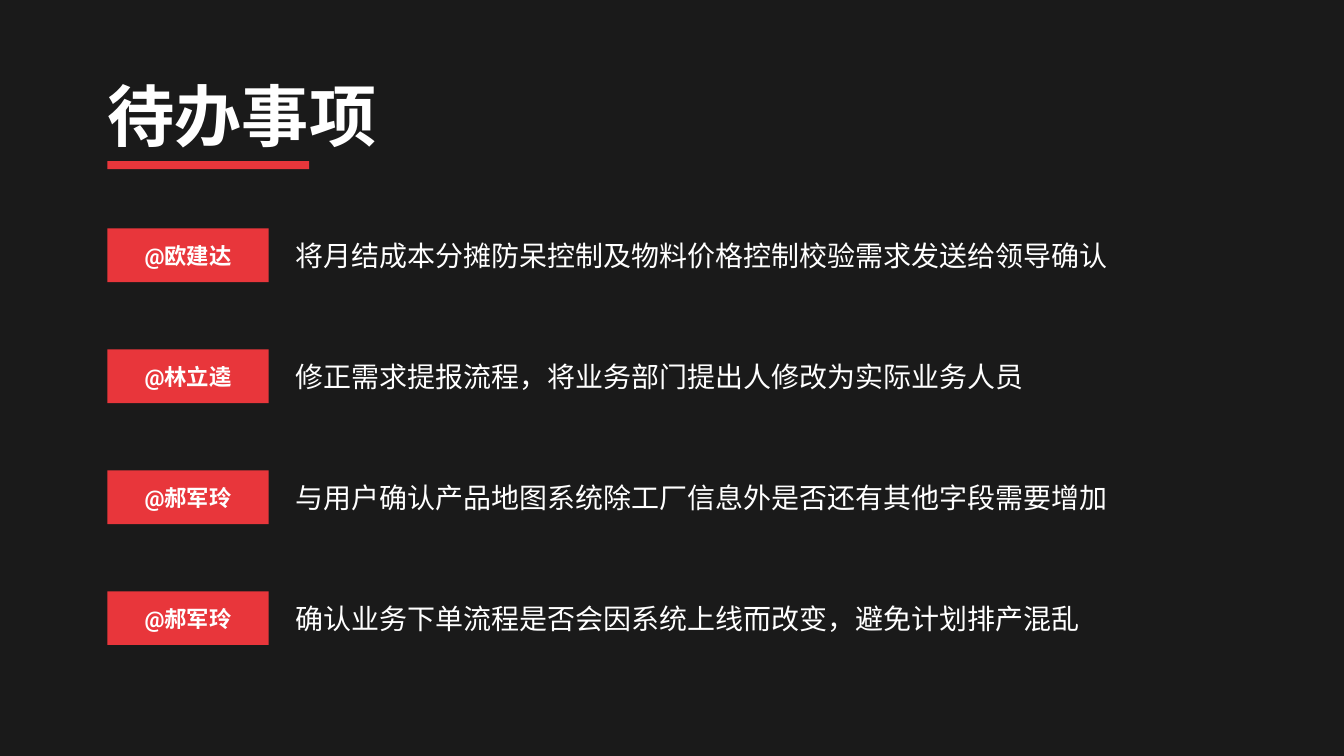
from dataclasses import dataclass

import pptx
import pptx.dml.color
import pptx.enum.shapes
import pptx.enum.text
import pptx.util
from pptx.util import Inches

ALIGN = pptx.enum.text.PP_ALIGN


@dataclass(frozen=True)
class Theme:
    background: str = "1A1A1A"
    accent: str = "E8363B"
    text: str = "FFFFFF"
    font: str = "Roboto"
    title_size: int = 36
    owner_size: int = 12
    task_size: int = 15


THEME = Theme()

SLIDE_WIDTH = 10
SLIDE_HEIGHT = SLIDE_WIDTH * 9 / 16
LEFT = 0.8
OWNER_WIDTH = 1.2
TASK_LEFT = 2.2
TASK_WIDTH = 7
FIRST_ROW = 1.7
ROW_STEP = 0.9
ROW_HEIGHT = 0.4

TODOS = [
    ("@欧建达", "将月结成本分摊防呆控制及物料价格控制校验需求发送给领导确认"),
    ("@林立逵", "修正需求提报流程，将业务部门提出人修改为实际业务人员"),
    ("@郝军玲", "与用户确认产品地图系统除工厂信息外是否还有其他字段需要增加"),
    ("@郝军玲", "确认业务下单流程是否会因系统上线而改变，避免计划排产混乱"),
]


def rgb(value):
    return pptx.dml.color.RGBColor.from_string(value)


def write_text(sp, text, size, bold=False, align=ALIGN.LEFT):
    """Put one vertically centred paragraph without margins into a shape."""
    tf = sp.text_frame
    tf.word_wrap = True
    tf.auto_size = pptx.enum.text.MSO_AUTO_SIZE.NONE
    tf.vertical_anchor = pptx.enum.text.MSO_ANCHOR.MIDDLE
    tf.margin_left = tf.margin_right = tf.margin_top = tf.margin_bottom = 0
    p = tf.paragraphs[0]
    p.text = text
    p.alignment = align
    p.font.name = THEME.font
    p.font.size = pptx.util.Pt(size)
    p.font.bold = bold
    p.font.color.rgb = rgb(THEME.text)


def set_title(s, text):
    sp = s.shapes.title
    sp.left, sp.top = Inches(LEFT), Inches(0.5)
    sp.width, sp.height = Inches(5), Inches(0.7)
    write_text(sp, text, THEME.title_size, bold=True)


def add_bar(s, left, top, width, height):
    sp = s.shapes.add_shape(
        pptx.enum.shapes.MSO_SHAPE.RECTANGLE,
        Inches(left), Inches(top), Inches(width), Inches(height),
    )
    sp.shadow.inherit = False
    sp.fill.solid()
    sp.fill.fore_color.rgb = rgb(THEME.accent)
    sp.line.fill.background()


def add_row_text(s, left, top, width, text, size, **style):
    box = s.shapes.add_textbox(
        Inches(left), Inches(top), Inches(width), Inches(ROW_HEIGHT)
    )
    write_text(box, text, size, **style)


def add_todo(s, top, owner, task):
    add_bar(s, LEFT, top, OWNER_WIDTH, ROW_HEIGHT)
    add_row_text(s, LEFT, top, OWNER_WIDTH, owner, THEME.owner_size,
                 bold=True, align=ALIGN.CENTER)
    add_row_text(s, TASK_LEFT, top, TASK_WIDTH, task, THEME.task_size)


def main():
    prs = pptx.Presentation()
    prs.slide_width = Inches(SLIDE_WIDTH)
    prs.slide_height = Inches(SLIDE_HEIGHT)
    s = prs.slides.add_slide(prs.slide_layouts.get_by_name("Title Only"))
    s.background.fill.solid()
    s.background.fill.fore_color.rgb = rgb(THEME.background)

    set_title(s, "待办事项")
    add_bar(s, LEFT, 1.2, 1.5, 0.06)
    for row, (owner, task) in enumerate(TODOS):
        add_todo(s, FIRST_ROW + row * ROW_STEP, owner, task)

    prs.save("out.pptx")


if __name__ == "__main__":
    main()
